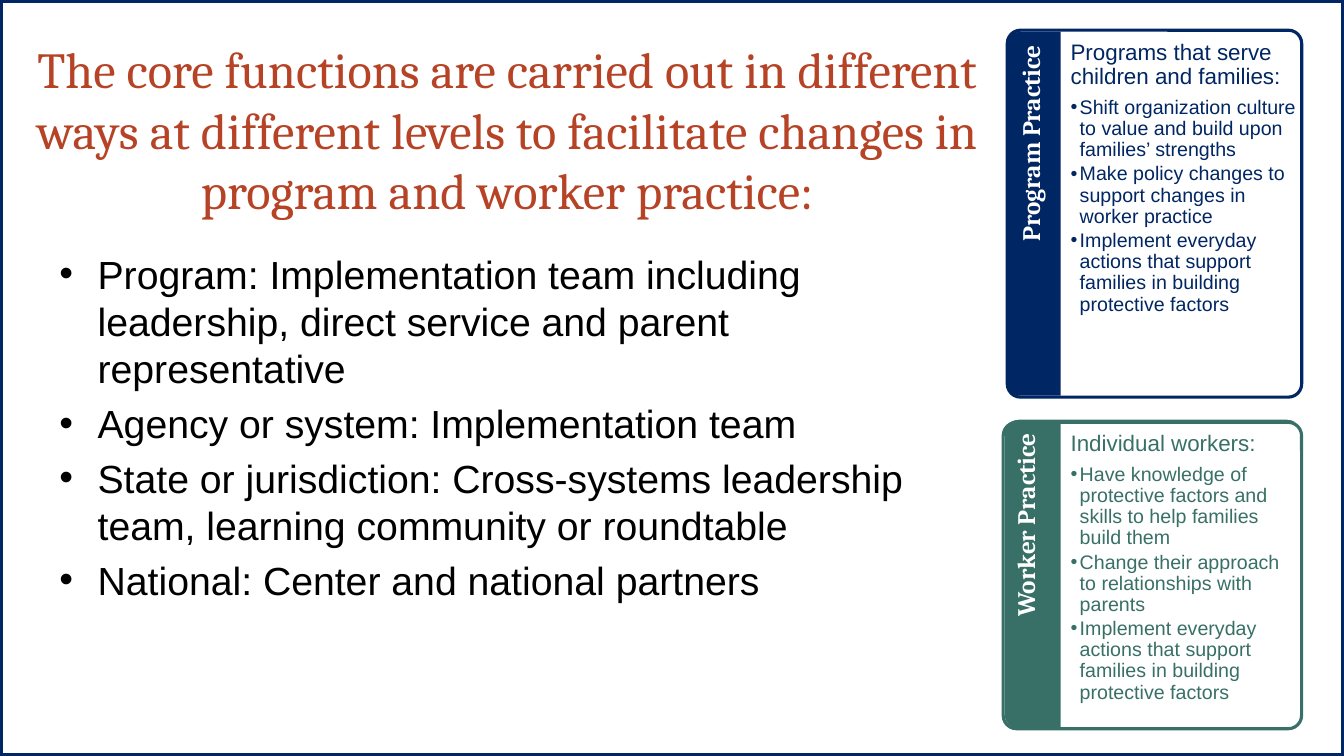
import pptx
import pptx.util
import pptx.dml.color
import pptx.enum.shapes
import pptx.enum.text
import pptx.oxml.ns
import lxml.etree

Pt = pptx.util.Pt
KIND = pptx.enum.shapes.MSO_SHAPE
ALIGN = pptx.enum.text.PP_ALIGN
ANCHOR = pptx.enum.text.MSO_ANCHOR
CELL = pptx.util.Inches(0.01)  # the grid has 1333 columns and 750 rows
COLS, ROWS = 1333, 750

THEME = {
    "navy": "002663", "green": "387067", "rust": "B64326",
    "black": "000000", "white": "FFFFFF",
    "serif": "Cambria", "sans": "Arial",
    "title": 36, "body": 28, "tab": 18, "lead": 16, "item": 14,
}

TITLE = ("The core functions are carried out in different ways at different "
         "levels to facilitate changes in program and worker practice:")
POINTS = [
    "Program: Implementation team including leadership, direct service "
    "and parent representative",
    "Agency or system: Implementation team",
    "State or jurisdiction: Cross-systems leadership team, learning "
    "community or roundtable",
    "National: Center and national partners",
]
SHARED = ("Implement everyday actions that support families in building "
          "protective factors")

# Each part of a panel is left, top, width, height in cells from its box.
PANELS = [
    {"box": (997, 30), "hue": "navy", "name": "Program Practice",
     "back": (0, 0, 297, 364), "tab": (7, 7, 59, 331),
     "page": (55, 1, 248, 363), "frame": (2, 0, 292, 364),
     "lead": "Programs that serve children and families:",
     "items": ["Shift organization culture to value and build upon "
               "families’ strengths",
               "Make policy changes to support changes in worker practice",
               SHARED]},
    {"box": (995, 415), "hue": "green", "name": "Worker Practice",
     "back": (0, 0, 297, 309), "tab": (4, 7, 69, 282),
     "page": (57, 4, 239, 304), "frame": (0, 4, 296, 304),
     "lead": "Individual workers:",
     "items": ["Have knowledge of protective factors and skills to help "
               "families build them",
               "Change their approach to relationships with parents",
               SHARED]},
]


def shade(name):
    return pptx.dml.color.RGBColor.from_string(THEME[name])


def apply(thing, values):
    for key, value in values.items():
        setattr(thing, key, value)


def place(box):
    return [cell * CELL for cell in box]


def shift(part, start):
    left, top, width, height = part
    return start[0] + left, start[1] + top, width, height


def draw(slide, kind, box, fill=None, line=None, weight=0, bend=None):
    """Add a preset shape with the given fill and outline."""
    shape = slide.shapes.add_shape(kind, *place(box))
    shape.shadow.inherit = False
    if fill:
        shape.fill.solid()
        shape.fill.fore_color.rgb = shade(fill)
    else:
        shape.fill.background()
    if line:
        shape.line.color.rgb = shade(line)
        shape.line.width = Pt(weight)
    else:
        shape.line.fill.background()
    if bend:
        shape.adjustments[0] = bend
    return shape


def frame(shape, anchor, inset):
    """Set wrapping, anchor and insets (left, top, right, bottom)."""
    sides = ("margin_left", "margin_top", "margin_right", "margin_bottom")
    values = dict(zip(sides, place(inset)))
    apply(shape.text_frame,
          {"word_wrap": True, "vertical_anchor": anchor, **values})
    return shape.text_frame


def write(text, words, size, face, hue, indent=0, bold=False, **form):
    """Fill the empty first paragraph or add one; indent makes a bullet."""
    para = text.paragraphs[0]
    if para.runs:
        para = text.add_paragraph()
    apply(para, {"alignment": ALIGN.LEFT, **form})
    run = para.add_run()
    run.text = words
    apply(run.font, {"size": Pt(THEME[size]), "name": THEME[face],
                     "bold": bold})
    run.font.color.rgb = shade(hue)
    if indent:
        props = para._p.get_or_add_pPr()
        props.set("marL", str(indent * CELL))
        props.set("indent", str(-indent * CELL))
        for tag, key, value in (("a:buFont", "typeface", THEME["sans"]),
                                ("a:buChar", "char", "•")):
            mark = lxml.etree.SubElement(props, pptx.oxml.ns.qn(tag))
            mark.set(key, value)


def head(slide, box):
    shape = slide.shapes.add_textbox(*place(box))
    text = frame(shape, ANCHOR.MIDDLE, (10, 5, 10, 5))
    write(text, TITLE, "title", "serif", "rust", alignment=ALIGN.CENTER)


def body(slide, box):
    shape = slide.shapes.add_textbox(*place(box))
    text = frame(shape, ANCHOR.TOP, (10, 5, 10, 5))
    for point in POINTS:
        write(text, point, "body", "sans", "black", indent=38,
              space_before=Pt(0.2 * THEME["body"]))


def tab(slide, box, name, hue):
    """Draw a label that reads upwards inside an upright box."""
    left, top, width, height = box
    turn = (height - width) / 2
    flat = [round(cell) for cell in place(
        (left - turn, top + turn, height, width))]
    shape = draw(slide, KIND.RECTANGLE, (0, 0, 1, 1), hue)
    apply(shape, dict(zip(("left", "top", "width", "height"), flat)))
    shape.rotation = 270
    text = frame(shape, ANCHOR.TOP, (0, 6, 8, 0))
    write(text, name, "tab", "serif", "white", bold=True,
          alignment=ALIGN.RIGHT, line_spacing=0.9)


def page(slide, box, lead, items, hue):
    shape = draw(slide, KIND.RECTANGLE, box, "white")
    text = frame(shape, ANCHOR.TOP, (10, 10, 10, 10))
    write(text, lead, "lead", "sans", hue, line_spacing=0.9,
          space_after=Pt(0.35 * THEME["lead"]))
    for item in items:
        write(text, item, "item", "sans", hue, indent=9, level=1,
              line_spacing=0.9, space_after=Pt(0.15 * THEME["item"]))


def panel(slide, box, data):
    hue = data["hue"]
    spot = {key: shift(data[key], box)
            for key in ("back", "tab", "page", "frame")}
    draw(slide, KIND.ROUNDED_RECTANGLE, spot["back"], hue, "white", 2, 0.05)
    tab(slide, spot["tab"], data["name"], hue)
    page(slide, spot["page"], data["lead"], data["items"], hue)
    draw(slide, KIND.ROUNDED_RECTANGLE, spot["frame"], None, hue, 2.25, 0.045)


def main():
    deck = pptx.Presentation()
    apply(deck, {"slide_width": COLS * CELL, "slide_height": ROWS * CELL})
    slide = deck.slides.add_slide(deck.slide_layouts[6])
    draw(slide, KIND.RECTANGLE, (0, 0, COLS, ROWS), None, "navy", 4.5)
    head(slide, (9, 30, 988, 196))
    body(slide, (49, 243, 928, 402))
    for data in PANELS:
        panel(slide, data["box"], data)
    deck.save("out.pptx")


if __name__ == "__main__":
    main()
